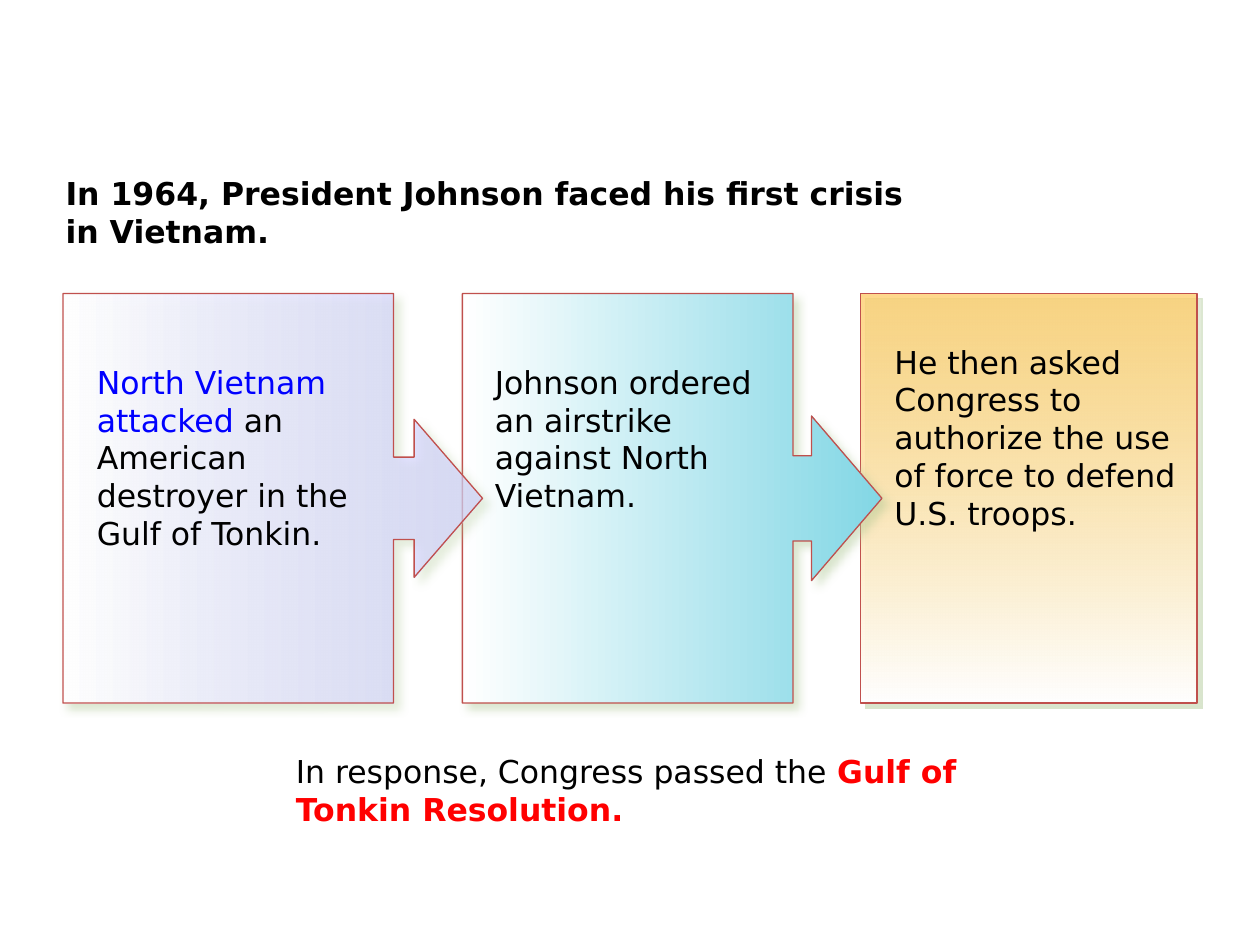
from lxml.etree import SubElement
from pptx import Presentation
from pptx.dml.color import RGBColor
from pptx.enum.shapes import MSO_SHAPE as Preset
from pptx.enum.text import MSO_ANCHOR as Anchor, PP_ALIGN as Align
from pptx.oxml.ns import qn
from pptx.util import Inches, Pt

FONT = "DejaVu Sans"
BLACK, BLUE, RED, WHITE = "000000", "0000FF", "FF0000", "FFFFFF"
OUTLINE, SHADOW = "C0504D", "ADC793"
STEP_TOP, STEP_HEIGHT = 2.33, 3.25


def rgb(hex_color):
    return RGBColor.from_string(hex_color)


def add_alpha(color_element, percent):
    SubElement(color_element, qn("a:alpha"), val=str(percent * 1000))


def add_shadow(step, blur):
    """Drop a soft green shadow to the lower right."""
    step.shadow.inherit = False
    effects = step._element.spPr.find(qn("a:effectLst"))
    outer = SubElement(effects, qn("a:outerShdw"), blurRad=str(Pt(blur)),
                       dist=str(Pt(4.2)), dir=str(45 * 60000),
                       algn="ctr", rotWithShape="0")
    add_alpha(SubElement(outer, qn("a:srgbClr"), val=SHADOW), 46)


def add_step(slide, preset, left, width, stops, angle, blur, adjustments=()):
    """Add a gradient panel; stops are (colour, opacity percent) pairs."""
    step = slide.shapes.add_shape(preset, Inches(left), Inches(STEP_TOP),
                                  Inches(width), Inches(STEP_HEIGHT))
    for index, value in enumerate(adjustments):
        step.adjustments[index] = value
    step.fill.gradient()
    step.fill.gradient_angle = angle
    for stop, (color, _) in zip(step.fill.gradient_stops, stops):
        stop.color.rgb = rgb(color)
    colors = step._element.spPr.find(qn("a:gradFill")).iter(qn("a:srgbClr"))
    for color_element, (_, opacity) in zip(colors, stops):
        if opacity < 100:
            add_alpha(color_element, opacity)
    step.line.color.rgb = rgb(OUTLINE)
    step.line.width = Pt(0.75)
    add_shadow(step, blur)


def write_text(holder, place, paragraphs):
    """Fill a text holder; paragraphs hold (text, colour, bold) runs."""
    box = dict(zip(("left", "top", "width", "height"), map(Inches, place)))
    for name, value in box.items():
        setattr(holder, name, value)
    frame = holder.text_frame
    frame.word_wrap = True
    frame.vertical_anchor = Anchor.TOP
    for number, runs in enumerate(paragraphs):
        paragraph = frame.add_paragraph() if number else frame.paragraphs[0]
        paragraph.alignment = Align.LEFT
        for text, color, bold in runs:
            for row, line in enumerate(text.split("\n")):
                if row:
                    paragraph.add_line_break()
                run = paragraph.add_run()
                run.text = line
                style = {"name": FONT, "size": Pt(18), "bold": bold}
                for name, value in style.items():
                    setattr(run.font, name, value)
                run.font.color.rgb = rgb(color)


def add_text(slide, place, *runs):
    write_text(slide.shapes.add_textbox(0, 0, 0, 0), place, [runs])


def main():
    deck = Presentation()
    deck.slide_width, deck.slide_height = Inches(10), Inches(7.5)
    slide = deck.slides.add_slide(deck.slide_layouts[5])

    write_text(slide.shapes.title, (0.42, 1.33, 9.42, 0.83), [
        [("In 1964, President Johnson faced his first crisis", BLACK, True)],
        [("in Vietnam.", BLACK, True)],
    ])

    add_step(slide, Preset.RECTANGLE, 6.83, 2.67,
             [("FFCC66", 75), (WHITE, 100)], 270, 0)
    add_step(slide, Preset.RIGHT_ARROW_CALLOUT, 3.67, 3.33,
             [(WHITE, 100), ("83D7E5", 100)], 0, 5,
             (0.208, 0.201, 0.172, 0.788))
    add_step(slide, Preset.RIGHT_ARROW_CALLOUT, 0.5, 3.33,
             [(WHITE, 100), ("CDCDFF", 62)], 0, 5,
             (0.201, 0.193, 0.167, 0.788))

    add_text(slide, (0.67, 2.83, 2.58, 2.32),
             ("North Vietnam attacked ", BLUE, False),
             ("an American destroyer in the Gulf of Tonkin.", BLACK, False))
    add_text(slide, (3.83, 2.83, 2.33, 1.93),
             ("Johnson ordered an airstrike \nagainst North Vietnam.",
              BLACK, False))
    add_text(slide, (7, 2.67, 2.5, 2.32),
             ("He then asked Congress to authorize the use of force "
              "to defend U.S. troops.", BLACK, False))
    add_text(slide, (2.25, 5.92, 5.92, 1.05),
             ("In response, Congress passed the ", BLACK, False),
             ("Gulf of Tonkin Resolution.", RED, True))

    deck.save("out.pptx")


if __name__ == "__main__":
    main()
